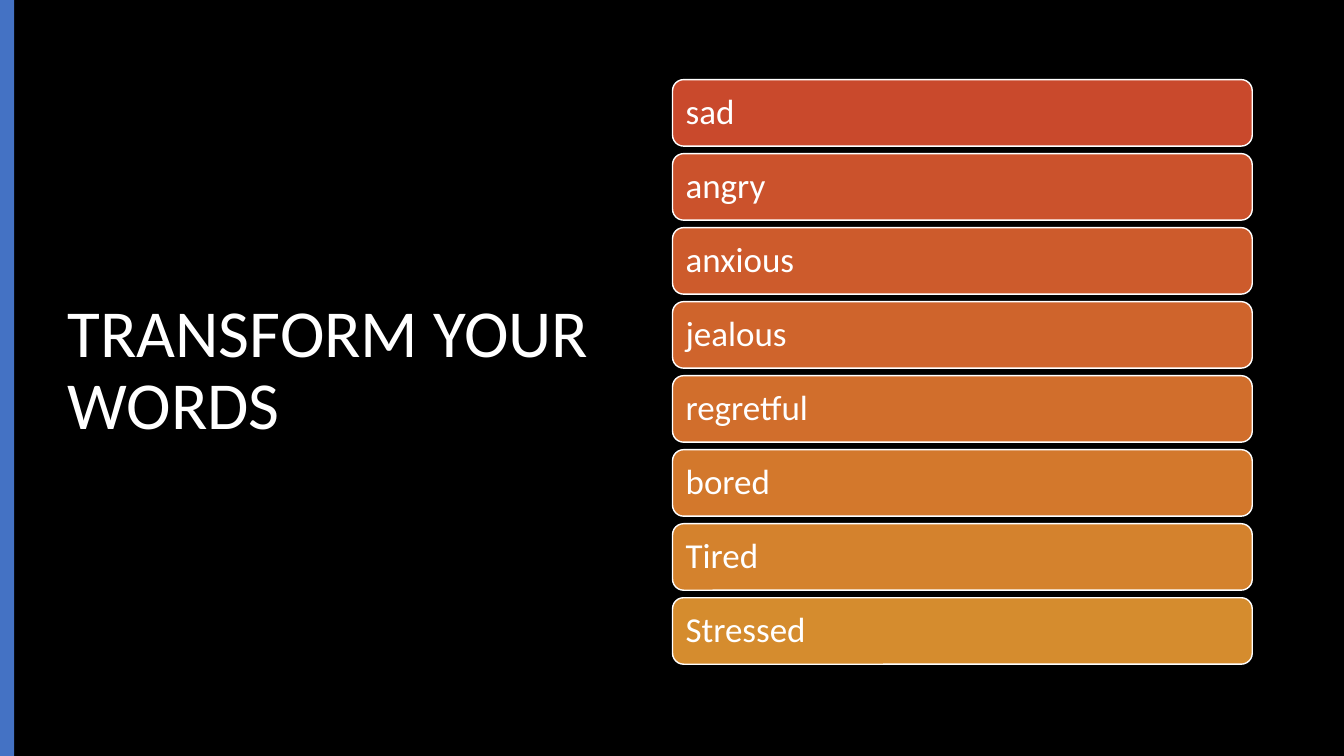
from pptx import Presentation
from pptx.dml.color import RGBColor
from pptx.enum.shapes import MSO_SHAPE as Shape
from pptx.enum.text import MSO_ANCHOR as Anchor, MSO_AUTO_SIZE as Fit, PP_ALIGN as Align
from pptx.util import Inches, Pt


def paint(fill, color):
    fill.solid()
    fill.fore_color.rgb = RGBColor.from_string(color)


def write(shape, text, size, margin):
    frame = shape.text_frame
    frame.text = text
    look = {"word_wrap": True, "auto_size": Fit.NONE, "vertical_anchor": Anchor.MIDDLE,
            "margin_left": Inches(margin), "margin_right": Inches(margin),
            "margin_top": Inches(0.05), "margin_bottom": Inches(0.05)}
    for key, value in look.items():
        setattr(frame, key, value)
    para = frame.paragraphs[0]
    para.alignment = Align.LEFT
    para.line_spacing = 0.9
    para.font.name = "Calibri"
    para.font.size = Pt(size)
    paint(para.font.fill, "FFFFFF")


deck = Presentation()
deck.slide_width = Inches(13.33)
deck.slide_height = Inches(7.5)
slide = deck.slides.add_slide(deck.slide_layouts[5])
paint(slide.background.fill, "000000")

title = slide.shapes.title
place = {"left": 0.57, "top": 0.68, "width": 5.67, "height": 6.02}
for key, value in place.items():
    setattr(title, key, Inches(value))
write(title, "TRANSFORM YOUR WORDS", 48, 0.1)

stripe = slide.shapes.add_shape(Shape.RECTANGLE, 0, 0, Inches(0.14), Inches(7.5))
stripe.shadow.inherit = False
paint(stripe.fill, "4472C4")
stripe.line.fill.background()

words = {
    "sad": "C9492C",
    "angry": "CB522C",
    "anxious": "CD5B2C",
    "jealous": "CF642C",
    "regretful": "D16E2C",
    "bored": "D3782C",
    "Tired": "D4822D",
    "Stressed": "D58C2E",
}
first, last = 0.79, 5.93
step = (last - first) / (len(words) - 1)
for row, (word, color) in enumerate(words.items()):
    bar = slide.shapes.add_shape(Shape.ROUNDED_RECTANGLE, Inches(6.67),
                                 Inches(first + row * step), Inches(5.75), Inches(0.66))
    bar.shadow.inherit = False
    paint(bar.fill, color)
    paint(bar.line.fill, "FFFFFF")
    bar.line.width = Pt(1)
    write(bar, word, 25, 0.1)

deck.save("out.pptx")
